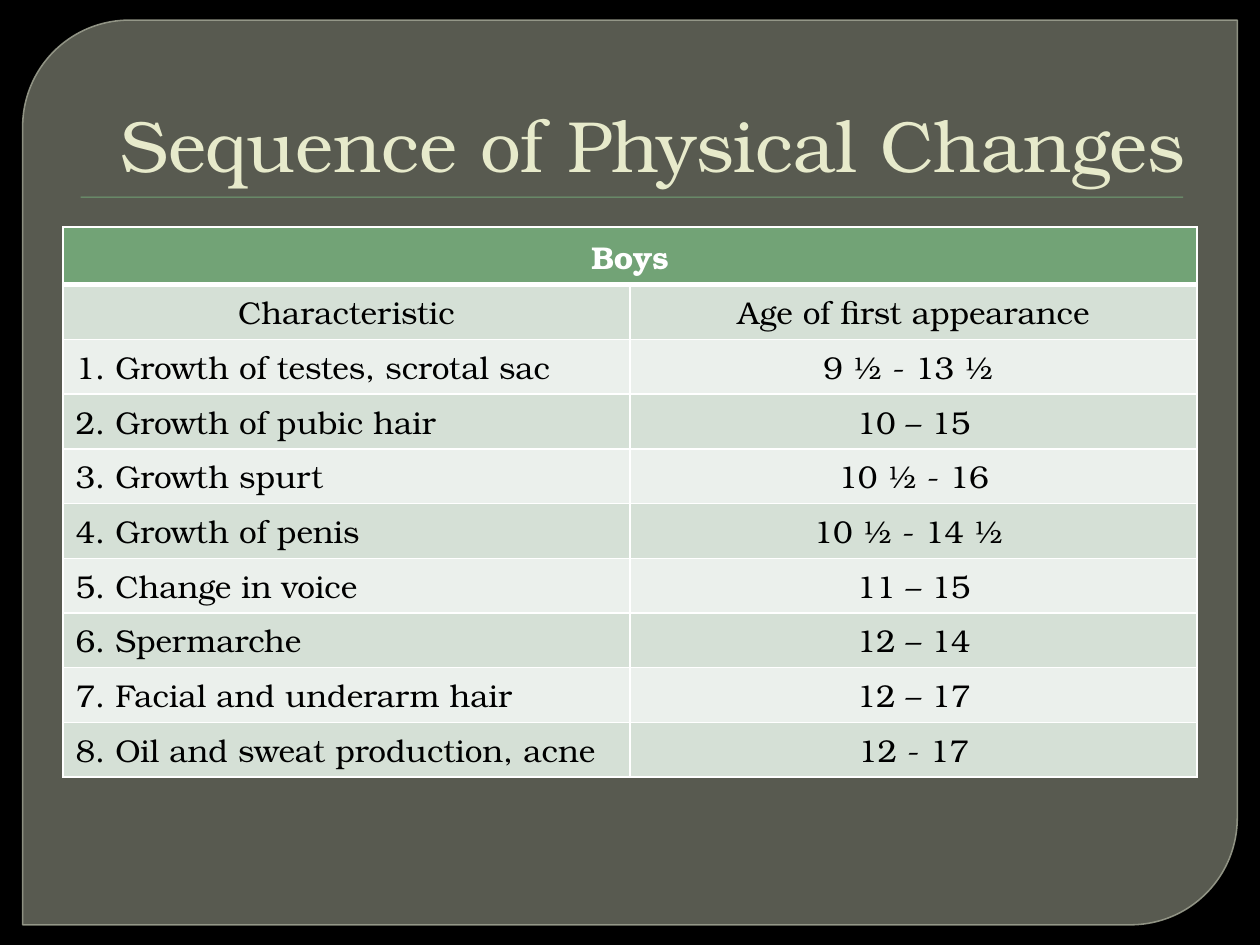
from lxml import etree
from pptx import Presentation
from pptx.dml.color import RGBColor
from pptx.enum.shapes import MSO_SHAPE
from pptx.enum.text import MSO_ANCHOR, PP_ALIGN
from pptx.oxml.ns import qn
from pptx.util import Inches, Pt

LEFT, CENTER, RIGHT = PP_ALIGN.LEFT, PP_ALIGN.CENTER, PP_ALIGN.RIGHT
BOTTOM = MSO_ANCHOR.BOTTOM
PANEL, RULE = MSO_SHAPE.ROUND_2_DIAG_RECTANGLE, MSO_SHAPE.RECTANGLE

FONT = "TeX Gyre Bonum"
COLORS = {
    "background": "000000", "panel": "888B7B", "panel_line": "9DA090",
    "title": "E7EACB", "green": "72A376", "dark_band": "D5E0D6",
    "light_band": "EBF0EC", "text": "000000", "white": "FFFFFF",
}

TITLE = "Sequence of Physical Changes"
GROUP = "Boys"
HEADINGS = ("Characteristic", "Age of first appearance")
CHANGES = [
    ("1. Growth of testes, scrotal sac", "9 ½ - 13 ½ "),
    ("2. Growth of pubic hair", "10 – 15"),
    ("3. Growth spurt", "10 ½ - 16"),
    ("4. Growth of penis", "10 ½ - 14 ½ "),
    ("5. Change in voice", "11 – 15"),
    ("6. Spermarche", "12 – 14"),
    ("7. Facial and underarm hair", "12 – 17"),
    ("8. Oil and sweat production, acne", "12 - 17"),
]
COL_WIDTH = 4.5
TABLE_HEIGHT, GROUP_HEIGHT = 4.37, 0.46


def rgb(name):
    return RGBColor.from_string(COLORS[name])


def write(tf, text, size=18, color="text", bold=False, align=LEFT):
    p = tf.paragraphs[0]
    p.alignment = align
    r = p.add_run()
    r.text = text
    r.font.name, r.font.size, r.font.bold = FONT, Pt(size), bold
    r.font.color.rgb = rgb(color)


def add_filled(slide, kind, box, color):
    sp = slide.shapes.add_shape(kind, *map(Inches, box))
    sp.shadow.inherit = False
    sp.fill.solid()
    sp.fill.fore_color.rgb = rgb(color)
    return sp


def set_alpha(fill_parent, percent):
    color = fill_parent.find(qn("a:solidFill"))[0]
    etree.SubElement(color, qn("a:alpha"), val=str(percent * 1000))


def set_borders(cell, bottom=1, top=1):
    tcPr = cell._tc.get_or_add_tcPr()
    widths = {"a:lnL": 1, "a:lnR": 1, "a:lnT": top, "a:lnB": bottom}
    for i, (tag, width) in enumerate(widths.items()):
        ln = etree.Element(qn(tag), w=str(Pt(width)))
        fill = etree.SubElement(ln, qn("a:solidFill"))
        etree.SubElement(fill, qn("a:srgbClr"), val=COLORS["white"])
        tcPr.insert(i, ln)


def add_backdrop(slide):
    slide.background.fill.solid()
    slide.background.fill.fore_color.rgb = rgb("background")
    panel = add_filled(slide, PANEL, (0.18, 0.16, 9.64, 7.18), "panel")
    panel.adjustments[0], panel.adjustments[1] = 0.118, 0
    panel.line.color.rgb = rgb("panel_line")
    panel.line.width = Pt(0.87)
    spPr = panel._element.spPr
    set_alpha(spPr, 65)
    set_alpha(spPr.find(qn("a:ln")), 88)

    rule = add_filled(slide, RULE, (0.64, 1.56, 8.75, 0.01), "green")
    rule.line.fill.background()
    effects = rule._element.spPr.find(qn("a:effectLst"))
    shadow = etree.SubElement(effects, qn("a:outerShdw"), blurRad=str(Pt(1)),
                              dist=str(Pt(1)), dir="5400000")
    black = etree.SubElement(shadow, qn("a:srgbClr"), val=COLORS["background"])
    etree.SubElement(black, qn("a:alpha"), val="75000")


def add_title(slide):
    box = slide.shapes.add_textbox(*map(Inches, (0.5, 0.28, 9, 1.25)))
    tf = box.text_frame
    tf.word_wrap = True
    tf.vertical_anchor = BOTTOM
    write(tf, TITLE, size=41.4, color="title", align=RIGHT)


def add_changes_table(slide):
    rows = [(GROUP, ""), HEADINGS, *CHANGES]
    row_height = (TABLE_HEIGHT - GROUP_HEIGHT) / (len(rows) - 1)
    box = (0.5, 1.8, 2 * COL_WIDTH, TABLE_HEIGHT)
    table = slide.shapes.add_table(len(rows), 2, *map(Inches, box)).table
    for column in table.columns:
        column.width = Inches(COL_WIDTH)
    table.cell(0, 0).merge(table.cell(0, 1))
    for i, values in enumerate(rows):
        table.rows[i].height = Inches(GROUP_HEIGHT if i == 0 else row_height)
        band = "green" if i == 0 else "dark_band" if i % 2 else "light_band"
        for j, value in enumerate(values):
            cell = table.cell(i, j)
            cell.fill.solid()
            cell.fill.fore_color.rgb = rgb(band)
            set_borders(cell, bottom=3 if i == 0 else 1, top=3 if i == 1 else 1)
            if value:
                write(cell.text_frame, value, bold=i == 0,
                      color="white" if i == 0 else "text",
                      align=LEFT if i > 1 and j == 0 else CENTER)


def main():
    prs = Presentation()
    prs.slide_width, prs.slide_height = Inches(10), Inches(7.5)
    slide = prs.slides.add_slide(prs.slide_layouts[6])
    add_backdrop(slide)
    add_title(slide)
    add_changes_table(slide)
    prs.save("out.pptx")


if __name__ == "__main__":
    main()
